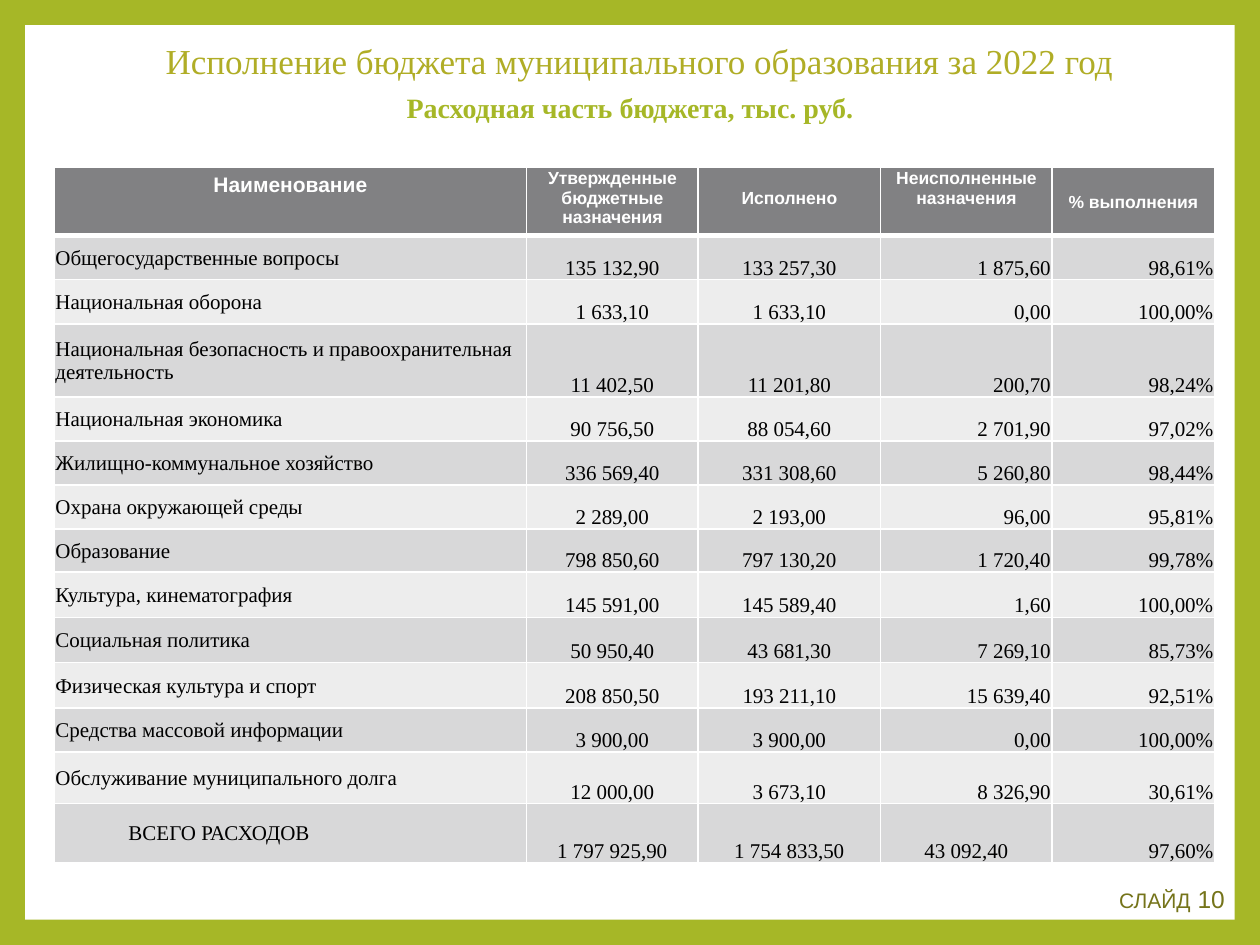
from lxml import etree
from pptx import Presentation
from pptx.dml.color import RGBColor
from pptx.enum import shapes, text
from pptx.oxml import ns
from pptx.util import Inches, Pt

# Content
TITLE = "Исполнение бюджета муниципального образования за 2022 год"
SUBTITLE = "Расходная часть бюджета, тыс. руб."
PAGE_LABEL = [("СЛАЙД", 12), (" 10", 14)]
HEADERS = ["Наименование", "Утвержденные бюджетные назначения", "Исполнено",
           "Неисполненные назначения", "% выполнения"]
EXPENSES = [
    ("Общегосударственные вопросы", "135 132,90", "133 257,30", "1 875,60", "98,61%"),
    ("Национальная оборона", "1 633,10", "1 633,10", "0,00", "100,00%"),
    ("Национальная безопасность и правоохранительная деятельность",
     "11 402,50", "11 201,80", "200,70", "98,24%"),
    ("Национальная экономика", "90 756,50", "88 054,60", "2 701,90", "97,02%"),
    ("Жилищно-коммунальное хозяйство", "336 569,40", "331 308,60", "5 260,80", "98,44%"),
    ("Охрана окружающей среды", "2 289,00", "2 193,00", "96,00", "95,81%"),
    ("Образование", "798 850,60", "797 130,20", "1 720,40", "99,78%"),
    ("Культура, кинематография", "145 591,00", "145 589,40", "1,60", "100,00%"),
    ("Социальная политика", "50 950,40", "43 681,30", "7 269,10", "85,73%"),
    ("Физическая культура и спорт", "208 850,50", "193 211,10", "15 639,40", "92,51%"),
    ("Средства массовой информации", "3 900,00", "3 900,00", "0,00", "100,00%"),
    ("Обслуживание муниципального долга", "12 000,00", "3 673,10", "8 326,90", "30,61%"),
    ("ВСЕГО РАСХОДОВ", "1 797 925,90", "1 754 833,50", "43 092,40", "97,60%"),
]
COLUMN_WIDTHS = [3.75, 1.36, 1.45, 1.36, 1.29]
ROW_HEIGHTS = [0.54, 0.35, 0.35, 0.58, 0.35, 0.35, 0.35, 0.34,
               0.36, 0.36, 0.36, 0.35, 0.41, 0.47]

GREEN = RGBColor(0xA6, 0xB7, 0x27)
OLIVE = RGBColor(0xB0, 0xAD, 0x26)
DARK_OLIVE = RGBColor(0x75, 0x74, 0x1A)
WHITE = RGBColor(0xFF, 0xFF, 0xFF)
BLACK = RGBColor(0, 0, 0)
HEADER_GREY = RGBColor(0x81, 0x81, 0x83)
BANDS = [RGBColor(0xD8, 0xD8, 0xD9), RGBColor(0xED, 0xED, 0xED)]
SERIF, SANS = "Times New Roman", "Arial"
LEFT, CENTER, RIGHT = text.PP_ALIGN.LEFT, text.PP_ALIGN.CENTER, text.PP_ALIGN.RIGHT
TOP, MIDDLE, BOTTOM = text.MSO_ANCHOR.TOP, text.MSO_ANCHOR.MIDDLE, text.MSO_ANCHOR.BOTTOM


def box(left, top, width, height):
    return [Inches(v) for v in (left, top, width, height)]


def write(frame, runs, font, color, align, bold=False, line_spacing=None):
    paragraph = frame.paragraphs[0]
    paragraph.alignment = align
    if line_spacing:
        paragraph.line_spacing = line_spacing
    for words, size in runs:
        run = paragraph.add_run()
        run.text = words
        run.font.name, run.font.size, run.font.bold = font, Pt(size), bold
        run.font.color.rgb = color


def set_borders(cell, **widths):
    """Solid white borders; widths in points for L, R, T and B."""
    properties = cell._tc.get_or_add_tcPr()
    for side in "LRTB":
        line = etree.SubElement(properties, ns.qn(f"a:ln{side}"),
                                w=str(Pt(widths.get(side, 1))))
        fill = etree.SubElement(line, ns.qn("a:solidFill"))
        etree.SubElement(fill, ns.qn("a:srgbClr"), val=str(WHITE))


def format_cell(cell, fill, anchor, margins, **borders):
    set_borders(cell, **borders)
    cell.fill.solid()
    cell.fill.fore_color.rgb = fill
    cell.vertical_anchor = anchor
    (cell.margin_left, cell.margin_top,
     cell.margin_right, cell.margin_bottom) = box(*margins)


prs = Presentation()
prs.slide_width, prs.slide_height = Inches(10), Inches(7.5)
slide = prs.slides.add_slide(prs.slide_layouts[5])

# Green frame and white panel behind everything
slide.background.fill.solid()
slide.background.fill.fore_color.rgb = GREEN
panel = slide.shapes.add_shape(shapes.MSO_SHAPE.RECTANGLE, *box(0.2, 0.2, 9.6, 7.1))
panel.shadow.inherit = False
panel.fill.solid()
panel.fill.fore_color.rgb = WHITE
panel.line.fill.background()
panel.element.getparent().insert(2, panel.element)

# Title
title = slide.shapes.title
title.left, title.top, title.width, title.height = box(0.43, 0.29, 9.29, 0.42)
title.text_frame.auto_size = text.MSO_AUTO_SIZE.NONE
title.text_frame.vertical_anchor = MIDDLE
write(title.text_frame, [(TITLE, 20)], SERIF, OLIVE, CENTER, line_spacing=0.9)

# Subtitle
subtitle = slide.shapes.add_textbox(*box(0.18, 0.7, 9.64, 0.4)).text_frame
subtitle.word_wrap = True
write(subtitle, [(SUBTITLE, 16)], SERIF, GREEN, CENTER, bold=True, line_spacing=0.9)

# Page label
page_label = slide.shapes.add_textbox(*box(8.39, 6.88, 1.43, 0.5)).text_frame
page_label.word_wrap = True
page_label.vertical_anchor = MIDDLE
write(page_label, PAGE_LABEL, SANS, DARK_OLIVE, RIGHT)

# Expenditure table
budget = slide.shapes.add_table(
    len(ROW_HEIGHTS), len(COLUMN_WIDTHS),
    *box(0.43, 1.33, sum(COLUMN_WIDTHS), sum(ROW_HEIGHTS))).table
for column, width in zip(budget.columns, COLUMN_WIDTHS):
    column.width = Inches(width)
for row, height in zip(budget.rows, ROW_HEIGHTS):
    row.height = Inches(height)

# Header row: the name column is larger, "Исполнено" sits one line lower
TIGHT = (0.01, 0.01, 0.01, 0)
header_margins = [(0.1, 0.05, 0.1, 0.05), TIGHT, (0.01, 0.17, 0.01, 0), TIGHT, TIGHT]
for c, (heading, margins) in enumerate(zip(HEADERS, header_margins)):
    cell = budget.cell(0, c)
    format_cell(cell, HEADER_GREY, MIDDLE if c == 4 else TOP, margins, B=3)
    write(cell.text_frame, [(heading, 10 if c else 12)], SANS, WHITE, CENTER, bold=True)

# Expense rows, the last one being the total
for r, expense in enumerate(EXPENSES, start=1):
    is_total = r == len(EXPENSES)
    aligns = [LEFT, CENTER, CENTER, CENTER if is_total else RIGHT, RIGHT]
    for c, (value, align) in enumerate(zip(expense, aligns)):
        cell = budget.cell(r, c)
        margins = (0.59, 0.01, 0.01, 0) if is_total and c == 0 else TIGHT
        format_cell(cell, BANDS[(r - 1) % 2], BOTTOM if c else MIDDLE, margins,
                    T=3 if r == 1 else 1)
        write(cell.text_frame, [(value, 12)], SERIF, BLACK, align)

prs.save("out.pptx")
